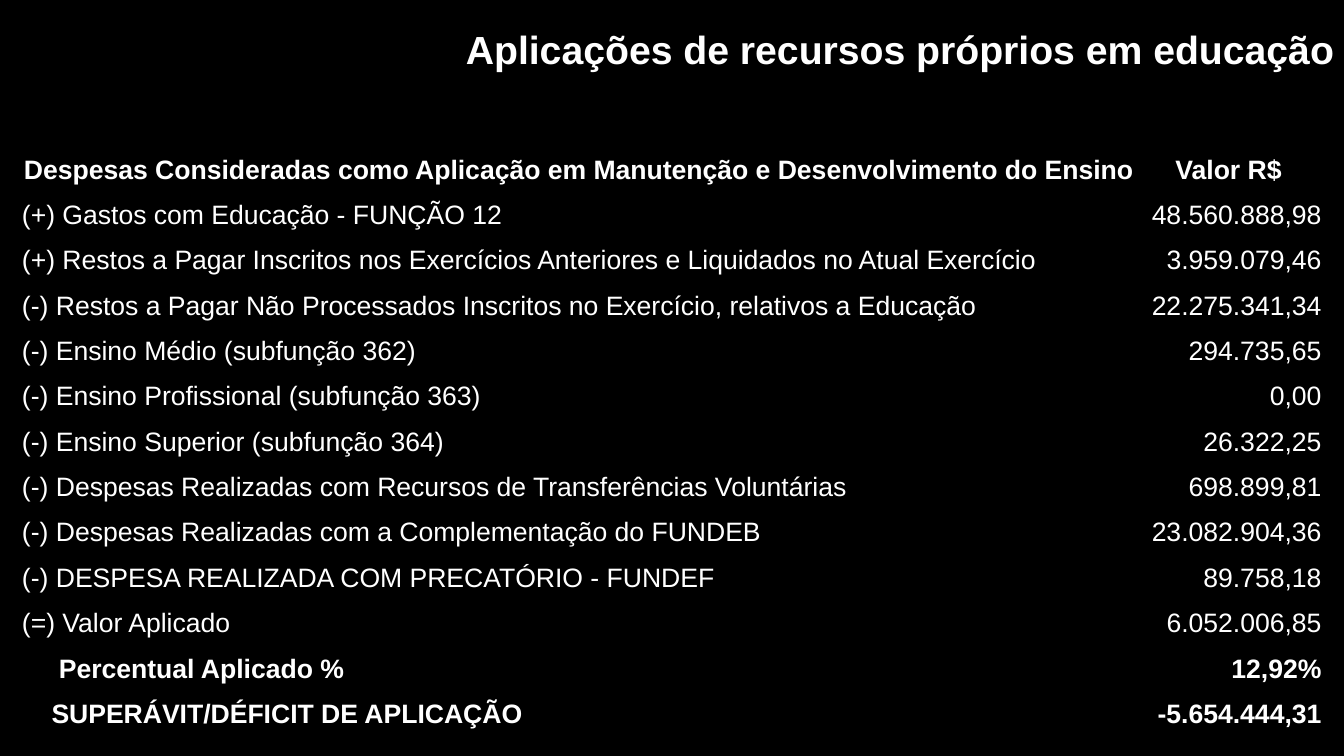
from lxml.etree import SubElement
from pptx import Presentation
from pptx.dml.color import RGBColor
from pptx.enum.text import MSO_ANCHOR as Anchor, MSO_AUTO_SIZE as AutoSize, PP_ALIGN as Align
from pptx.oxml.ns import qn
from pptx.util import Pt

BLACK = RGBColor(0x00, 0x00, 0x00)
WHITE = RGBColor(0xFF, 0xFF, 0xFF)

COLUMN_WIDTHS = [332, 124, 100, 115.3, 105.2, 19, 132.8]
ROW_HEIGHT = 32.4
HEADER = ("Despesas Consideradas como Aplicação em Manutenção e Desenvolvimento do Ensino", "Valor R$", [(0, 5)])
EXPENSES = [
    ("(+) Gastos com Educação - FUNÇÃO 12", "48.560.888,98", [(0, 1), (4, 5)]),
    ("(+) Restos a Pagar Inscritos nos Exercícios Anteriores e Liquidados no Atual Exercício",
     "3.959.079,46", [(0, 5)]),
    ("(-) Restos a Pagar Não Processados Inscritos no Exercício, relativos a Educação",
     "22.275.341,34", [(0, 4)]),
    ("(-) Ensino Médio (subfunção 362)", "294.735,65", [(3, 4)]),
    ("(-) Ensino Profissional (subfunção 363)", "0,00", [(3, 4)]),
    ("(-) Ensino Superior (subfunção 364)", "26.322,25", [(3, 4)]),
    ("(-) Despesas Realizadas com Recursos de Transferências Voluntárias", "698.899,81", [(0, 4)]),
    ("(-) Despesas Realizadas com a Complementação do FUNDEB", "23.082.904,36", [(0, 2), (3, 4)]),
    ("(-) DESPESA REALIZADA COM PRECATÓRIO - FUNDEF", "89.758,18", [(0, 5)]),
    ("(=) Valor Aplicado", "6.052.006,85", [(4, 5)]),
]
TOTALS = [
    ("Percentual Aplicado %", "12,92%", [(4, 5)], 26.4),
    ("SUPERÁVIT/DÉFICIT DE APLICAÇÃO", "-5.654.444,31", [(0, 1), (4, 5)], 21.1),
]


class SlideBuilder:
    typeface = "Arial"

    def __init__(self, deck):
        self.page = deck.slides.add_slide(deck.slide_layouts[5])
        fill = self.page.background.fill
        fill.solid()
        fill.fore_color.rgb = BLACK

    def set_text(self, frame, text, size, align, bold):
        frame.text = text
        paragraph = frame.paragraphs[0]
        paragraph.alignment = align
        font = paragraph.font
        font.name, font.size, font.bold = self.typeface, Pt(size), bold
        font.color.rgb = WHITE

    def title(self, text, left, top, width, height):
        box = self.page.shapes.title
        box.left, box.top, box.width, box.height = map(Pt, (left, top, width, height))
        frame = box.text_frame
        frame.word_wrap = True
        frame.auto_size = AutoSize.SHAPE_TO_FIT_TEXT
        frame.vertical_anchor = Anchor.TOP
        self.set_text(frame, text, 28, Align.RIGHT, True)

    def table(self, row_count, left, top):
        frame = self.page.shapes.add_table(
            row_count, len(COLUMN_WIDTHS), Pt(left), Pt(top),
            Pt(sum(COLUMN_WIDTHS)), Pt(row_count * ROW_HEIGHT))
        table = frame.table
        table.first_row = table.horz_banding = False
        for column, width in zip(table.columns, COLUMN_WIDTHS):
            column.width = Pt(width)
        for row in table.rows:
            row.height = Pt(ROW_HEIGHT)
        for cell in table.iter_cells():
            self.style_cell(cell)
        return table

    def style_cell(self, cell):
        cell.margin_left = cell.margin_right = cell.margin_top = cell.margin_bottom = 0
        cell.vertical_anchor = Anchor.MIDDLE
        properties = cell._tc.get_or_add_tcPr()
        for side in ("lnL", "lnR", "lnT", "lnB"):
            line = SubElement(properties, qn(f"a:{side}"), w=str(Pt(0.5)))
            solid = SubElement(line, qn("a:solidFill"))
            SubElement(solid, qn("a:srgbClr"), val=str(BLACK))
        cell.fill.solid()
        cell.fill.fore_color.rgb = BLACK

    def table_row(self, table, index, label, value, spans, indent=0,
                  bold=False, aligns=(Align.LEFT, Align.RIGHT)):
        for first, last in spans:
            table.cell(index, first).merge(table.cell(index, last))
        label_cell = table.cell(index, 0)
        value_cell = table.cell(index, len(COLUMN_WIDTHS) - 1)
        label_cell.margin_left = Pt(indent)
        for cell, text, align in zip((label_cell, value_cell), (label, value), aligns):
            self.set_text(cell.text_frame, text, 19, align, bold)


def main():
    deck = Presentation()
    deck.slide_width, deck.slide_height = Pt(960), Pt(540)
    builder = SlideBuilder(deck)
    builder.title("Aplicações de recursos próprios em educação", 192, 14.4, 768, 41)
    table = builder.table(1 + len(EXPENSES) + len(TOTALS), 15.7, 105.1)
    builder.table_row(table, 0, *HEADER, bold=True, aligns=(Align.CENTER, Align.CENTER))
    for index, expense in enumerate(EXPENSES, start=1):
        builder.table_row(table, index, *expense)
    for index, total in enumerate(TOTALS, start=1 + len(EXPENSES)):
        builder.table_row(table, index, *total, bold=True)
    deck.save("out.pptx")


if __name__ == "__main__":
    main()
